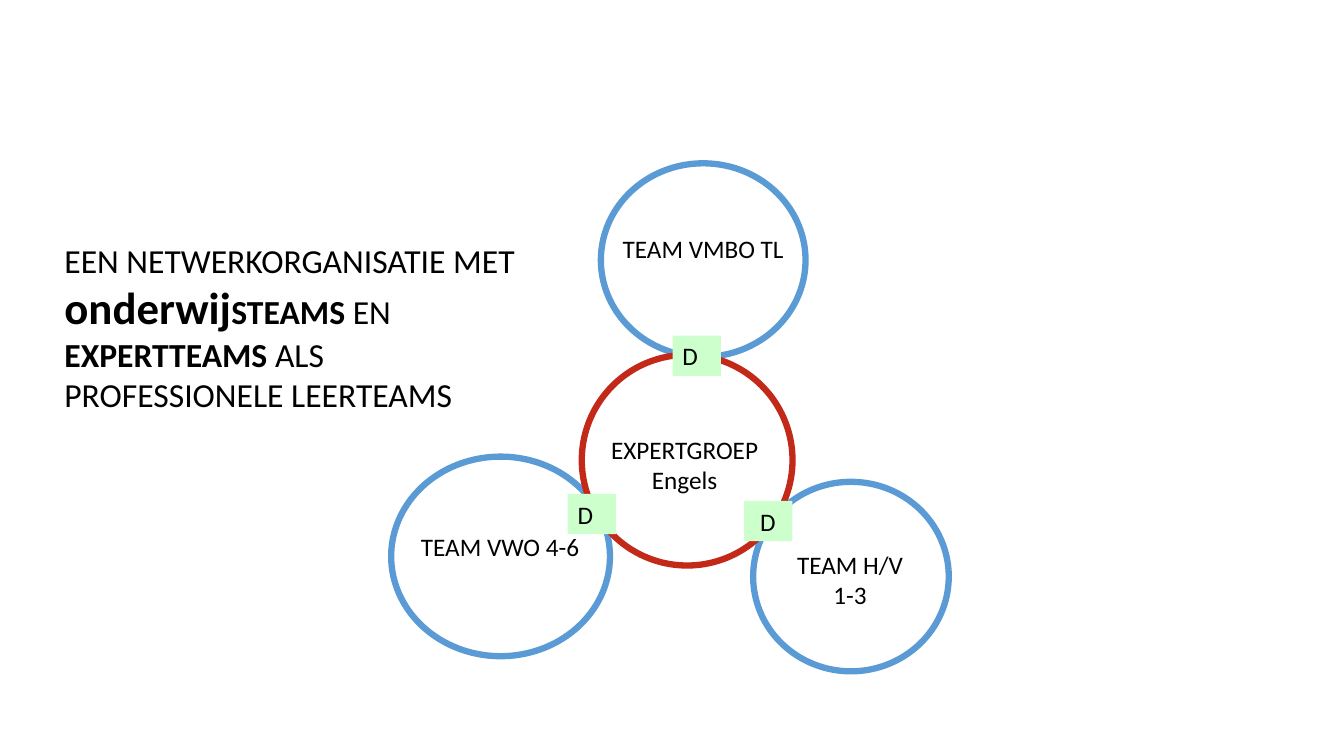
from dataclasses import dataclass

from pptx import Presentation
from pptx.dml.color import RGBColor
from pptx.enum.shapes import MSO_SHAPE
from pptx.enum.text import MSO_ANCHOR, MSO_AUTO_SIZE, PP_ALIGN
from pptx.shapes.autoshape import Shape
from pptx.slide import Slide
from pptx.text.text import TextFrame
from pptx.util import Emu, Pt

EMU_PER_PX = 9144


@dataclass(frozen=True)
class Theme:
    font: str = "Calibri"
    text: RGBColor = RGBColor(0, 0, 0)
    paper: RGBColor = RGBColor(255, 255, 255)
    team: RGBColor = RGBColor(0x5B, 0x9B, 0xD5)
    expert: RGBColor = RGBColor(0xC2, 0x29, 0x19)
    badge: RGBColor = RGBColor(0xCC, 0xFF, 0xCC)
    ring: Pt = Pt(4.5)
    label_size: Pt = Pt(18)
    statement_size: Pt = Pt(24)
    emphasis_size: Pt = Pt(32)


THEME = Theme()


@dataclass(frozen=True)
class Area:
    left: int
    top: int
    width: int
    height: int

    def emu(self) -> tuple[Emu, ...]:
        return tuple(Emu(px * EMU_PER_PX) for px in (self.left, self.top, self.width, self.height))


@dataclass(frozen=True)
class Circle:
    area: Area
    color: RGBColor


@dataclass(frozen=True)
class Label:
    area: Area
    lines: tuple[str, ...]


@dataclass(frozen=True)
class Badge:
    left: int
    top: int
    inset: int = 10


@dataclass(frozen=True)
class Span:
    text: str
    bold: bool = False
    size: Pt = THEME.statement_size


CIRCLES = (
    Circle(Area(388, 453, 217, 198), THEME.team),
    Circle(Area(596, 162, 203, 192), THEME.team),
    Circle(Area(747, 478, 194, 188), THEME.team),
    Circle(Area(577, 352, 209, 209), THEME.expert),
)
LABELS = (
    Label(Area(596, 227, 203, 40), ("TEAM VMBO TL",)),
    Label(Area(383, 522, 226, 40), ("TEAM VWO 4-6",)),
    Label(Area(742, 540, 202, 71), ("TEAM H/V", "1-3")),
    Label(Area(572, 426, 214, 71), ("EXPERTGROEP Engels",)),
)
BADGES = (Badge(667, 333), Badge(563, 490), Badge(738, 497, inset=16))
STATEMENT = (
    Span("EEN NETWERKORGANISATIE MET "),
    Span("onderwij", True, THEME.emphasis_size),
    Span("STEAMS", True),
    Span(" EN "),
    Span("EXPERTTEAMS", True),
    Span(" ALS PROFESSIONELE LEERTEAMS"),
)


def add_filled(page: Slide, kind: MSO_SHAPE, area: Area, fill: RGBColor) -> Shape:
    shape = page.shapes.add_shape(kind, *area.emu())
    shape.shadow.inherit = False
    shape.fill.solid()
    shape.fill.fore_color.rgb = fill
    return shape


def add_circle(page: Slide, circle: Circle) -> None:
    shape = add_filled(page, MSO_SHAPE.OVAL, circle.area, THEME.paper)
    shape.line.color.rgb = circle.color
    shape.line.width = THEME.ring


def set_up_frame(frame: TextFrame) -> None:
    frame.word_wrap = True
    frame.auto_size = MSO_AUTO_SIZE.SHAPE_TO_FIT_TEXT
    frame.vertical_anchor = MSO_ANCHOR.TOP


def add_text_frame(page: Slide, area: Area) -> TextFrame:
    frame = page.shapes.add_textbox(*area.emu()).text_frame
    set_up_frame(frame)
    return frame


def write_lines(frame: TextFrame, lines: tuple[str, ...], alignment: PP_ALIGN) -> None:
    frame.text = "\n".join(lines)
    for para in frame.paragraphs:
        para.alignment = alignment
        para.font.name = THEME.font
        para.font.size = THEME.label_size
        para.font.color.rgb = THEME.text


def add_label(page: Slide, label: Label) -> None:
    write_lines(add_text_frame(page, label.area), label.lines, PP_ALIGN.CENTER)


def add_badge(page: Slide, badge: Badge) -> None:
    box = add_filled(page, MSO_SHAPE.RECTANGLE, Area(badge.left, badge.top, 48, 40), THEME.badge)
    box.line.fill.background()
    set_up_frame(box.text_frame)
    box.text_frame.margin_left = Emu(badge.inset * EMU_PER_PX)
    write_lines(box.text_frame, ("D",), PP_ALIGN.LEFT)


def add_statement(page: Slide, area: Area, spans: tuple[Span, ...]) -> None:
    para = add_text_frame(page, area).paragraphs[0]
    para.font.name = THEME.font
    para.font.color.rgb = THEME.text
    for span in spans:
        run = para.add_run()
        run.text = span.text
        run.font.bold = span.bold
        run.font.size = span.size


def main() -> None:
    deck = Presentation()
    deck.slide_width = Emu(1333 * EMU_PER_PX)
    deck.slide_height = Emu(750 * EMU_PER_PX)
    page = deck.slides.add_slide(deck.slide_layouts[6])
    for circle in CIRCLES:
        add_circle(page, circle)
    for label in LABELS:
        add_label(page, label)
    for badge in BADGES:
        add_badge(page, badge)
    add_statement(page, Area(54, 233, 482, 192), STATEMENT)
    deck.save("out.pptx")


if __name__ == "__main__":
    main()
